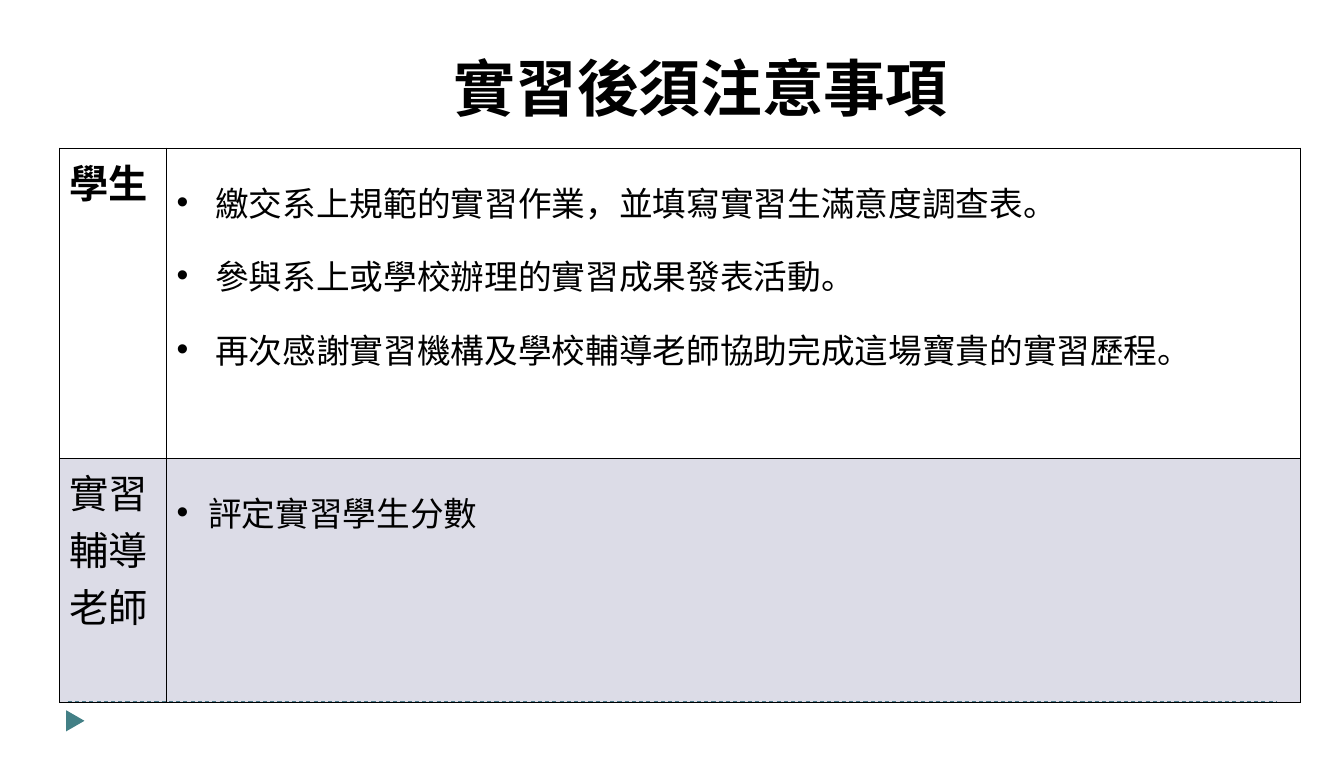
from lxml import etree
from pptx import Presentation
from pptx.dml.color import RGBColor
from pptx.enum.dml import MSO_LINE
from pptx.enum.shapes import MSO_CONNECTOR, MSO_SHAPE
from pptx.enum.text import MSO_ANCHOR, MSO_AUTO_SIZE, PP_ALIGN
from pptx.oxml.ns import qn
from pptx.util import Cm, Pt

STRAIGHT = MSO_CONNECTOR.STRAIGHT
TRIANGLE = MSO_SHAPE.ISOSCELES_TRIANGLE
DASH = MSO_LINE.DASH
MIDDLE = MSO_ANCHOR.MIDDLE
FIT_SHAPE = MSO_AUTO_SIZE.SHAPE_TO_FIT_TEXT
CENTER = PP_ALIGN.CENTER

FONT = "Noto Sans CJK SC"
BLACK, TEAL, INDIGO = "000000", "438086", "53548A"

DUTIES = [
    {"role": "學生", "bold": True, "height": 7.8, "indent": 0.97, "tint": None,
     "tasks": ["繳交系上規範的實習作業，並填寫實習生滿意度調查表。",
               "參與系上或學校辦理的實習成果發表活動。",
               "再次感謝實習機構及學校輔導老師協助完成這場寶貴的實習歷程。"]},
    {"role": "實習輔導老師", "bold": False, "height": 6.15, "indent": 0.79,
     "tint": INDIGO, "tasks": ["評定實習學生分數"]},
]


def paint(color_format, color):
    color_format.rgb = RGBColor.from_string(color)


def apply(target, values):
    for attribute, value in values.items():
        setattr(target, attribute, value)


def add_xml(parent, tag, **attributes):
    return etree.SubElement(parent, qn(tag), attributes)


class SlideBuilder:
    """Hold the slide and its text style, and add each kind of element."""

    def __init__(self, slide, font, color):
        self.slide, self.font, self.color = slide, font, color

    def add_text(self, paragraph, text, size, bold=False):
        run = paragraph.add_run()
        run.text = text
        apply(run.font, {"name": self.font, "size": Pt(size), "bold": bold})
        paint(run.font.color, self.color)
        add_xml(run.font._element, "a:ea", typeface=self.font)

    def title(self, text, left, top, width, height):
        heading = self.slide.shapes.title
        apply(heading, {"left": Cm(left), "top": Cm(top),
                        "width": Cm(width), "height": Cm(height)})
        apply(heading.text_frame, {"word_wrap": False, "auto_size": FIT_SHAPE,
                                   "vertical_anchor": MIDDLE})
        paragraph = heading.text_frame.paragraphs[0]
        paragraph.alignment = CENTER
        self.add_text(paragraph, text, 44, True)

    def rule(self, left, right, y, color):
        footer_rule = self.slide.shapes.add_connector(
            STRAIGHT, Cm(left), Cm(y), Cm(right), Cm(y))
        paint(footer_rule.line.color, color)
        apply(footer_rule.line, {"width": Pt(0.75), "dash_style": DASH})
        add_xml(footer_rule._element.spPr, "a:effectLst")

    def marker(self, left, top, width, height, color):
        arrow = self.slide.shapes.add_shape(
            TRIANGLE, Cm(left), Cm(top), Cm(width), Cm(height))
        arrow.rotation = 90
        arrow.shadow.inherit = False
        arrow.fill.solid()
        paint(arrow.fill.fore_color, color)
        arrow.line.fill.background()

    def style_cell(self, cell, tint):
        properties = cell._tc.get_or_add_tcPr()
        for side in ("L", "R", "T", "B"):
            border = add_xml(properties, f"a:ln{side}", w=str(Pt(1)))
            add_xml(add_xml(border, "a:solidFill"), "a:srgbClr", val=self.color)
        if tint is None:
            cell.fill.background()
            return
        cell.fill.solid()
        paint(cell.fill.fore_color, tint)
        for shade in properties.findall(f"{qn('a:solidFill')}/{qn('a:srgbClr')}"):
            add_xml(shade, "a:alpha", val="20000")

    def bullets(self, cell, items, indent):
        frame = cell.text_frame
        for index, item in enumerate(items):
            paragraph = frame.add_paragraph() if index else frame.paragraphs[0]
            paragraph.line_spacing = 1.5
            properties = paragraph._p.get_or_add_pPr()
            properties.set("marL", str(Cm(indent)))
            properties.set("indent", str(-Cm(indent)))
            add_xml(properties, "a:buFont", typeface="Arial")
            add_xml(properties, "a:buChar", char="•")
            self.add_text(paragraph, item, 24)

    def duty_table(self, duties, left, top, widths):
        heights = [duty["height"] for duty in duties]
        table = self.slide.shapes.add_table(
            len(duties), len(widths), Cm(left), Cm(top),
            Cm(sum(widths)), Cm(sum(heights))).table
        apply(table, {"first_row": False, "horz_banding": False})
        for column, width in zip(table.columns, widths):
            column.width = Cm(width)
        for row, duty in zip(table.rows, duties):
            row.height = Cm(duty["height"])
            role_cell, task_cell = row.cells
            for cell in (role_cell, task_cell):
                self.style_cell(cell, duty["tint"])
            self.add_text(role_cell.text_frame.paragraphs[0], duty["role"], 28, duty["bold"])
            self.bullets(task_cell, duty["tasks"], duty["indent"])


def main():
    deck = Presentation()
    apply(deck, {"slide_width": Cm(33.81), "slide_height": Cm(19.05)})
    builder = SlideBuilder(deck.slides.add_slide(deck.slide_layouts[5]), FONT, BLACK)
    builder.rule(1.7, 32.11, 17.65, TEAL)
    builder.marker(1.63, 17.91, 0.53, 0.46, TEAL)
    builder.title("實習後須注意事項", 11.1, 1.12, 13.06, 2.13)
    builder.duty_table(DUTIES, 1.5, 3.73, [2.69, 28.52])
    deck.save("out.pptx")


if __name__ == "__main__":
    main()
